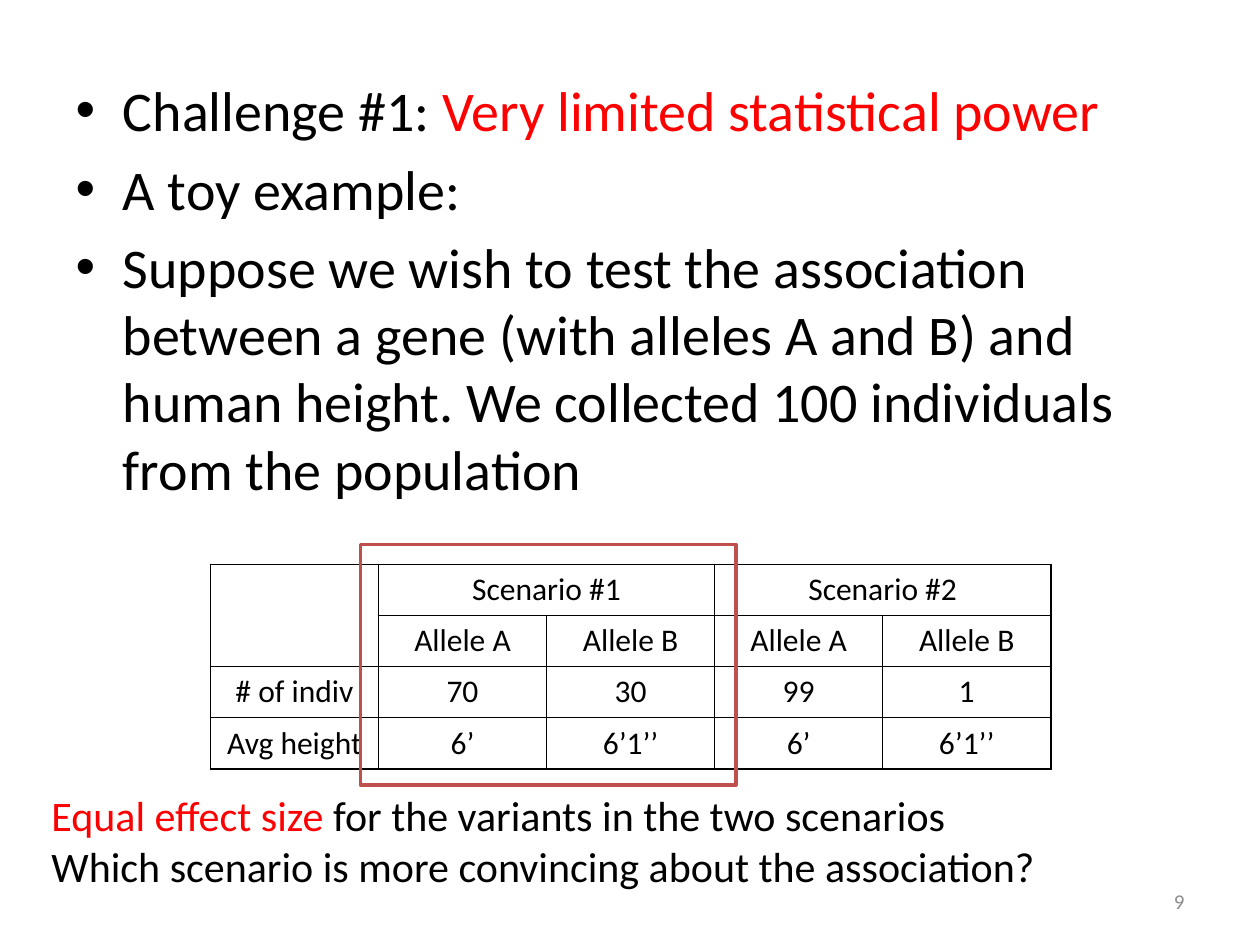
from dataclasses import dataclass

from lxml import etree
from pptx import Presentation
from pptx import util as u
from pptx.dml import color
from pptx.enum import shapes, text
from pptx.oxml import ns

BLACK, RED, GRAY, FRAME_RED = "000000", "FF0000", "8C8C8C", "C0504D"


@dataclass
class Span:
    """A stretch of text in one colour."""
    wording: str
    color: str = BLACK


@dataclass
class Box:
    left: float
    top: float
    width: float
    height: float

    def lengths(self) -> list:
        return [u.Inches(n) for n in (self.left, self.top, self.width, self.height)]


BULLETS = [
    [Span("Challenge #1: "), Span("Very limited statistical power", RED)],
    [Span("A toy example:")],
    [Span("Suppose we wish to test the association between a gene (with alleles A and B) "
          "and human height. We collected 100 individuals from the population")],
]
CONCLUSION = [
    [Span("Equal effect size", RED), Span(" for the variants in the two scenarios")],
    [Span("Which scenario is more convincing about the association?")],
]
SCENARIOS = [
    ["", "Scenario #1", "", "Scenario #2", ""],
    ["", "Allele A", "Allele B", "Allele A", "Allele B"],
    ["# of indiv", "70", "30", "99", "1"],
    ["Avg height", "6’", "6’1’’", "6’", "6’1’’"],
]
MERGES = [((0, 0), (1, 0)), ((0, 1), (0, 2)), ((0, 3), (0, 4))]


def rgb(value: str) -> color.RGBColor:
    return color.RGBColor.from_string(value)


def write(frame, lines: list, size: float, align=None) -> None:
    for index, spans in enumerate(lines):
        paragraph = frame.paragraphs[0] if index == 0 else frame.add_paragraph()
        paragraph.alignment = align
        for span in spans:
            run = paragraph.add_run()
            run.text = span.wording
            for name, value in {"name": "Calibri", "size": u.Pt(size)}.items():
                setattr(run.font, name, value)
            run.font.color.rgb = rgb(span.color)


def add_text(slide, box: Box, lines: list, size: float, align=None, **formats) -> None:
    frame = slide.shapes.add_textbox(*box.lengths()).text_frame
    for name, value in formats.items():
        setattr(frame, name, value)
    write(frame, lines, size, align)


def add_borders(cell, value: str, points: float) -> None:
    properties = cell._tc.get_or_add_tcPr()
    for index, side in enumerate(("a:lnL", "a:lnR", "a:lnT", "a:lnB")):
        line = etree.Element(ns.qn(side), w=str(u.Pt(points)))
        fill = etree.SubElement(line, ns.qn("a:solidFill"))
        etree.SubElement(fill, ns.qn("a:srgbClr"), val=value)
        properties.insert(index, line)


def add_scenario_table(slide, box: Box) -> None:
    rows, columns = len(SCENARIOS), len(SCENARIOS[0])
    table = slide.shapes.add_table(rows, columns, *box.lengths()).table
    table.first_row = table.horz_banding = False
    for row, wordings in enumerate(SCENARIOS):
        for column, wording in enumerate(wordings):
            cell = table.cell(row, column)
            cell.fill.background()
            add_borders(cell, BLACK, 1)
            if wording:
                write(cell.text_frame, [[Span(wording)]], 18, text.PP_ALIGN.CENTER)
    for first, last in MERGES:
        table.cell(*first).merge(table.cell(*last))


def add_frame(slide, box: Box) -> None:
    shape = slide.shapes.add_shape(shapes.MSO_SHAPE.RECTANGLE, *box.lengths())
    shape.shadow.inherit = False
    shape.fill.background()
    shape.line.color.rgb = rgb(FRAME_RED)
    shape.line.width = u.Pt(2)


def main() -> None:
    presentation = Presentation()
    presentation.slide_width, presentation.slide_height = u.Inches(10), u.Inches(7.5)
    slide = presentation.slides.add_slide(presentation.slide_layouts[1])
    title, body = slide.placeholders
    title.element.getparent().remove(title.element)

    body.left, body.top, body.width, body.height = Box(0.5, 0.55, 9, 6.56).lengths()
    write(body.text_frame, BULLETS, 32)
    add_scenario_table(slide, Box(1.67, 4.48, 6.67, 1.62))
    add_text(slide, Box(0.31, 6.22, 8.02, 0.91), CONCLUSION, 24,
             word_wrap=False, auto_size=text.MSO_AUTO_SIZE.SHAPE_TO_FIT_TEXT)
    add_frame(slide, Box(2.86, 4.32, 2.98, 1.91))
    add_text(slide, Box(7.17, 6.95, 2.33, 0.4), [[Span("9", GRAY)]], 12,
             text.PP_ALIGN.RIGHT, word_wrap=True,
             vertical_anchor=text.MSO_ANCHOR.MIDDLE)
    presentation.save("out.pptx")


if __name__ == "__main__":
    main()
